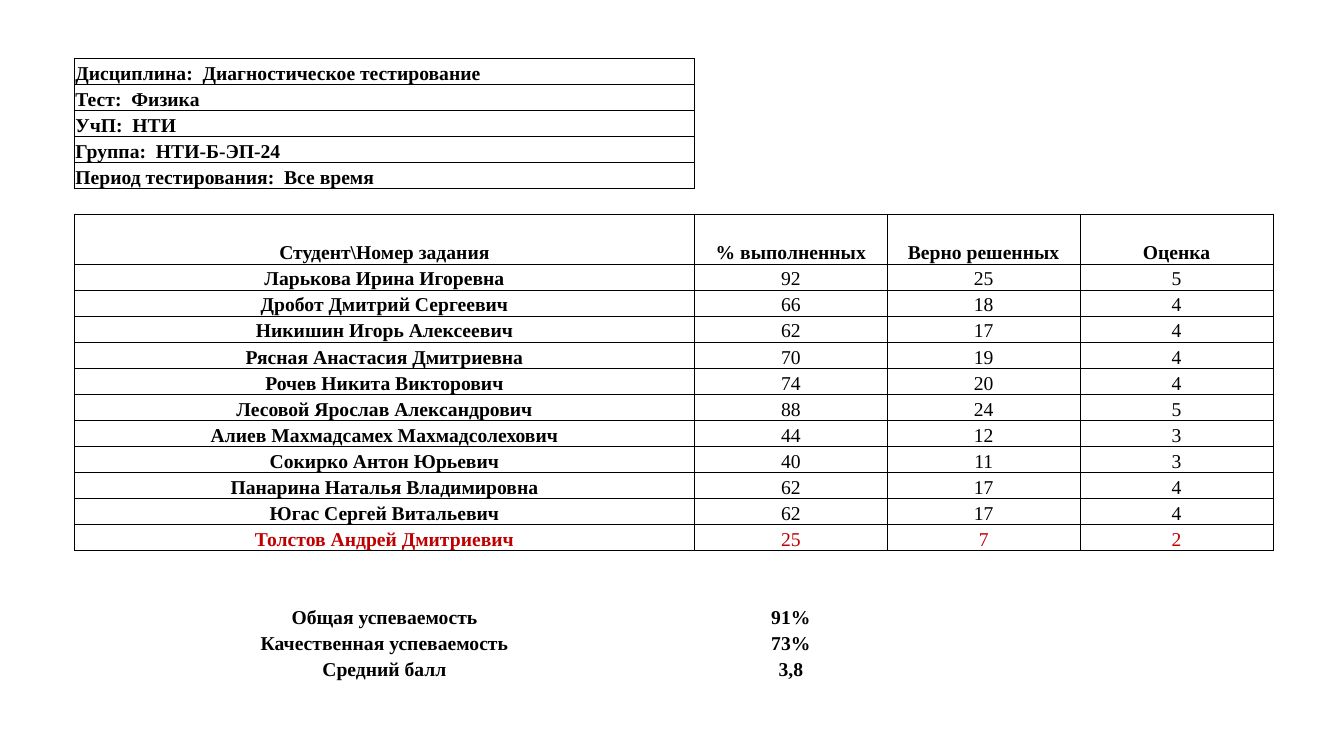
from lxml.etree import SubElement
from pptx import Presentation
from pptx.dml.color import RGBColor
from pptx.enum.text import MSO_ANCHOR as Anchor, PP_ALIGN as Align
from pptx.oxml.ns import qn
from pptx.util import Cm, Pt

BLACK = RGBColor(0x00, 0x00, 0x00)
RED = RGBColor(0xC0, 0x00, 0x00)
NO_STYLE = "{2D5ABB26-0587-4C30-8999-92F81FD0307C}"

# Contents
TEST_INFO = [
    "Дисциплина:  Диагностическое тестирование",
    "Тест:  Физика",
    "УчП:  НТИ",
    "Группа:  НТИ-Б-ЭП-24",
    "Период тестирования:  Все время",
]
HEADINGS = ["Студент\\Номер задания", "% выполненных", "Верно решенных", "Оценка"]
STUDENTS = [
    ("Ларькова Ирина Игоревна", 92, 25, 5),
    ("Дробот Дмитрий Сергеевич", 66, 18, 4),
    ("Никишин Игорь Алексеевич", 62, 17, 4),
    ("Рясная Анастасия Дмитриевна", 70, 19, 4),
    ("Рочев Никита Викторович", 74, 20, 4),
    ("Лесовой Ярослав Александрович", 88, 24, 5),
    ("Алиев Махмадсамех Махмадсолехович", 44, 12, 3),
    ("Сокирко Антон Юрьевич", 40, 11, 3),
    ("Панарина Наталья Владимировна", 62, 17, 4),
    ("Югас Сергей Витальевич", 62, 17, 4),
    ("Толстов Андрей Дмитриевич", 25, 7, 2),
]
SUMMARY = [
    ("Общая успеваемость", "91%"),
    ("Качественная успеваемость", "73%"),
    ("Средний балл", "3,8"),
]

# Row positions
HEADING_ROW = len(TEST_INFO) + 1
FIRST_STUDENT = HEADING_ROW + 1
LAST_STUDENT = HEADING_ROW + len(STUDENTS)
FIRST_SUMMARY = LAST_STUDENT + 3
ROW_COUNT = FIRST_SUMMARY + len(SUMMARY)


def is_boxed(row, column):
    """Tell whether a cell has a border on all four sides."""
    in_info = 0 <= row < len(TEST_INFO) and column == 0
    in_results = HEADING_ROW <= row <= LAST_STUDENT and 0 <= column < len(HEADINGS)
    return in_info or in_results


class SlideBuilder:
    font_name = "Times New Roman"
    font_size = Pt(14)
    line_width = Pt(0.5)

    def __init__(self, slide):
        self.slide = slide

    def table(self, left, top, widths, heights):
        shape = self.slide.shapes.add_table(
            len(heights), len(widths), left, top, sum(widths), sum(heights))
        table = shape.table
        table.first_row = table.horz_banding = False
        shape._element.find(".//" + qn("a:tableStyleId")).text = NO_STYLE
        for column, width in zip(table.columns, widths):
            column.width = width
        for row, height in zip(table.rows, heights):
            row.height = height
        for row in range(len(heights)):
            for column in range(len(widths)):
                self.empty_cell(table.cell(row, column), row, column)
        return table

    def empty_cell(self, cell, row, column):
        cell.margin_left = cell.margin_right = cell.margin_top = Cm(0.02)
        cell.margin_bottom = 0
        cell.vertical_anchor = Anchor.BOTTOM
        # Keeps unfilled cells from stretching their row
        SubElement(cell.text_frame.paragraphs[0]._p, qn("a:endParaRPr"),
                   sz=str(self.font_size.centipoints))
        neighbours = {"a:lnL": (0, -1), "a:lnR": (0, 1), "a:lnT": (-1, 0), "a:lnB": (1, 0)}
        for side, (down, right) in neighbours.items():
            drawn = is_boxed(row, column) or is_boxed(row + down, column + right)
            self.border(cell, side, drawn)
        cell.fill.background()

    def border(self, cell, side, drawn):
        line = SubElement(cell._tc.get_or_add_tcPr(), qn(side), w=str(self.line_width))
        if drawn:
            fill = SubElement(line, qn("a:solidFill"))
            SubElement(fill, qn("a:srgbClr"), val=str(BLACK))
        else:
            SubElement(line, qn("a:noFill"))

    def cell_text(self, cell, text, bold=True, color=BLACK, align=Align.CENTER):
        paragraph = cell.text_frame.paragraphs[0]
        paragraph.alignment = align
        run = paragraph.add_run()
        run.text = str(text)
        run.font.name = self.font_name
        run.font.size = self.font_size
        run.font.bold = bold
        run.font.color.rgb = color


def main():
    presentation = Presentation()
    presentation.slide_width = Cm(33.87)
    presentation.slide_height = Cm(19.05)
    builder = SlideBuilder(presentation.slides.add_slide(presentation.slide_layouts[6]))

    # Grid: equal rows, with a taller one for the headings
    heading_height = Cm(1.24)
    row_height = (Cm(15.7) - heading_height) // (ROW_COUNT - 1)
    heights = [row_height] * ROW_COUNT
    heights[HEADING_ROW] = heading_height
    widths = [Cm(15.62)] + [Cm(4.86)] * 3
    table = builder.table(Cm(1.88), Cm(1.47), widths, heights)

    # Test details
    for row, text in enumerate(TEST_INFO):
        builder.cell_text(table.cell(row, 0), text, align=Align.LEFT)

    # Results of the students
    for column, heading in enumerate(HEADINGS):
        builder.cell_text(table.cell(HEADING_ROW, column), heading)
    for row, student in enumerate(STUDENTS, FIRST_STUDENT):
        color = RED if student[-1] == 2 else BLACK
        for column, value in enumerate(student):
            builder.cell_text(table.cell(row, column), value, bold=column == 0, color=color)

    # Summary of the group
    for row, pair in enumerate(SUMMARY, FIRST_SUMMARY):
        for column, text in enumerate(pair):
            builder.cell_text(table.cell(row, column), text)

    presentation.save("out.pptx")


if __name__ == "__main__":
    main()
